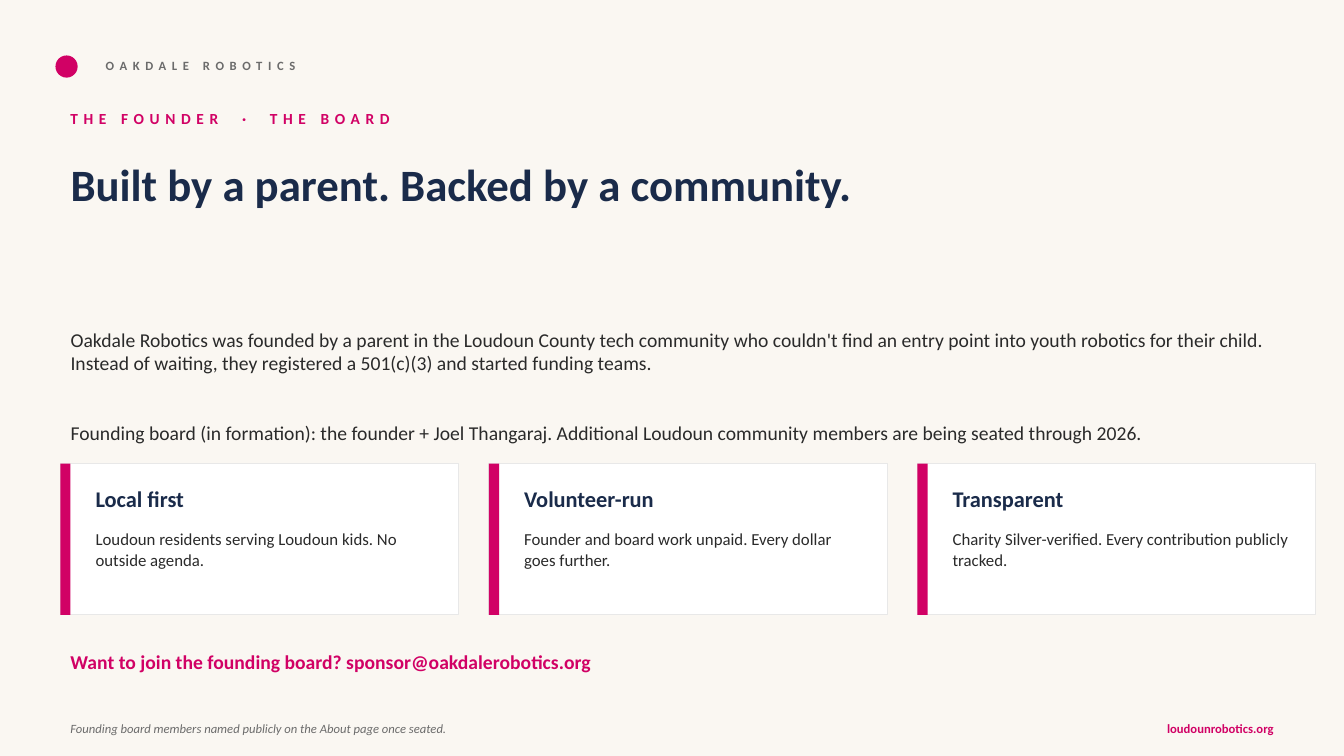
import pptx
import pptx.util
import pptx.dml.color
import pptx.enum.shapes
import pptx.enum.text
from lxml import etree

BRAND = "OAKDALE ROBOTICS"
TOPIC = "THE FOUNDER  ·  THE BOARD"
TITLE = "Built by a parent. Backed by a community."
STORY = [
    "Oakdale Robotics was founded by a parent in the Loudoun County tech "
    "community who couldn't find an entry point into youth robotics for their "
    "child. Instead of waiting, they registered a 501(c)(3) and started "
    "funding teams.",
    "Founding board (in formation): the founder + Joel Thangaraj. Additional "
    "Loudoun community members are being seated through 2026.",
]
CARDS = [
    ("Local first",
     "Loudoun residents serving Loudoun kids. No outside agenda."),
    ("Volunteer-run",
     "Founder and board work unpaid. Every dollar goes further."),
    ("Transparent",
     "Charity Silver-verified. Every contribution publicly tracked."),
]
INVITE = "Want to join the founding board? sponsor@oakdalerobotics.org"
NOTE = "Founding board members named publicly on the About page once seated."
SITE = "loudounrobotics.org"

COLORS = {
    "paper": "FAF7F2", "pink": "D10165", "navy": "1A2B4A", "ink": "2A2A2A",
    "gray": "6B6B6B", "white": "FFFFFF", "edge": "E8E8E8",
}
FONT = "Calibri"
WIDE, HIGH = 13.33, 7.5
LEFT = 0.6
FULL = WIDE - 2 * LEFT
CARD_W, CARD_H, CARD_Y, GAP = 3.95, 1.5, 4.6, 0.3
BAR, PAD = 0.1, 0.25
FOOT_Y, FOOT_H, SITE_W = 7.08, 0.3, 2.4

Inches, Pt = pptx.util.Inches, pptx.util.Pt
SHAPE = pptx.enum.shapes.MSO_SHAPE
ALIGN = pptx.enum.text.PP_ALIGN
ANCHOR = pptx.enum.text.MSO_ANCHOR


def color(name):
    return pptx.dml.color.RGBColor.from_string(COLORS[name])


def place(shape, box):
    shape.left, shape.top, shape.width, shape.height = map(Inches, box)


def write(shape, text, size, tint, bold=False, italic=False, track=0,
          align=ALIGN.LEFT, middle=False):
    frame = shape.text_frame
    frame.text = text
    frame.word_wrap = True
    frame.auto_size = pptx.enum.text.MSO_AUTO_SIZE.NONE
    frame.vertical_anchor = ANCHOR.MIDDLE if middle else ANCHOR.TOP
    for para in frame.paragraphs:
        para.alignment = align
        for run in para.runs:
            font = run.font
            font.name, font.size = FONT, Pt(size)
            font.bold, font.italic = bold, italic
            font.color.rgb = color(tint)
            if track:
                run._r.get_or_add_rPr().set("spc", str(track * 100))


def label(slide, box, *args, **style):
    write(slide.shapes.add_textbox(*map(Inches, box)), *args, **style)


def block(slide, kind, box, fill, edge=None):
    shape = slide.shapes.add_shape(kind, *map(Inches, box))
    shape.shadow.inherit = False
    shape.fill.solid()
    shape.fill.fore_color.rgb = color(fill)
    if edge:
        shape.line.color.rgb = color(edge)
        shape.line.width = Pt(1)
    else:
        shape.line.fill.background()


def story(body):
    """Fill the body placeholder with plain, unbulleted paragraphs."""
    place(body, (LEFT, 3.2, FULL, 1.4))
    write(body, "\n".join(STORY), 14, "ink")
    for para in body.text_frame.paragraphs:
        props = para._p.get_or_add_pPr()
        props.set("marL", "0")
        props.set("indent", "0")
        etree.SubElement(props, pptx.oxml.ns.qn("a:buNone"))
        para.space_before = Pt(0)
    body.text_frame.paragraphs[0].space_after = Pt(33)


def card(slide, col, head, text):
    x = LEFT + col * (CARD_W + GAP)
    inner = CARD_W - PAD - BAR
    block(slide, SHAPE.RECTANGLE, (x, CARD_Y, CARD_W, CARD_H), "white", "edge")
    block(slide, SHAPE.RECTANGLE, (x, CARD_Y, BAR, CARD_H), "pink")
    label(slide, (x + PAD, CARD_Y + 0.15, inner, 0.4), head, 16, "navy",
          bold=True, middle=True)
    label(slide, (x + PAD, CARD_Y + 0.6, inner, 0.85), text, 12, "ink")


def main():
    deck = pptx.Presentation()
    deck.slide_width, deck.slide_height = Inches(WIDE), Inches(HIGH)
    slide = deck.slides.add_slide(deck.slide_layouts[1])
    slide.background.fill.solid()
    slide.background.fill.fore_color.rgb = color("paper")

    block(slide, SHAPE.OVAL, (0.55, 0.55, 0.22, 0.22), "pink")
    label(slide, (0.95, 0.5, 5, 0.3), BRAND, 9, "gray",
          bold=True, track=4, middle=True)
    label(slide, (LEFT, 1, 8, 0.35), TOPIC, 11, "pink",
          bold=True, track=4, middle=True)

    title, body = slide.placeholders
    place(title, (LEFT, 1.5, FULL, 1.15))
    write(title, TITLE, 32, "navy", bold=True)
    story(body)
    for col, (head, text) in enumerate(CARDS):
        card(slide, col, head, text)

    label(slide, (LEFT, 6.4, FULL, 0.4), INVITE, 14, "pink", bold=True)
    label(slide, (LEFT, FOOT_Y, FULL, FOOT_H), NOTE, 9, "gray",
          italic=True, middle=True)
    label(slide, (LEFT + FULL - SITE_W, FOOT_Y, SITE_W, FOOT_H), SITE, 9,
          "pink", bold=True, align=ALIGN.RIGHT, middle=True)
    deck.save("out.pptx")


if __name__ == "__main__":
    main()
